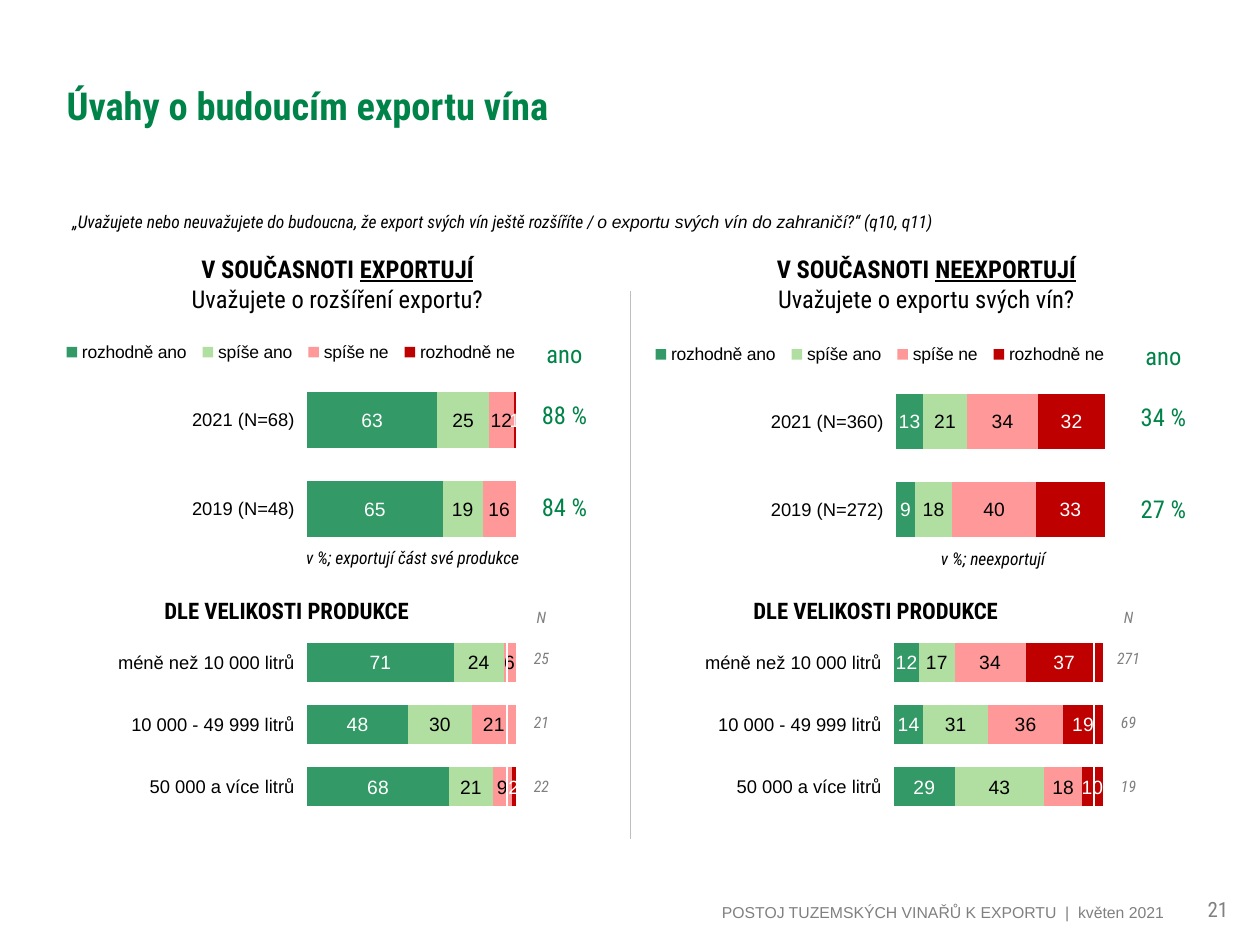
"""Build the slide on plans for future wine exports."""
from dataclasses import dataclass

import lxml.etree
import pptx
import pptx.chart.chart
import pptx.chart.data
import pptx.dml.color
import pptx.enum.chart
import pptx.enum.shapes
import pptx.enum.text
import pptx.oxml
import pptx.oxml.ns
import pptx.slide
import pptx.text.text
import pptx.util

RGB = pptx.dml.color.RGBColor
Align = pptx.enum.text.PP_ALIGN
Anchor = pptx.enum.text.MSO_ANCHOR
qn = pptx.oxml.ns.qn

BLACK = RGB(0x00, 0x00, 0x00)
WHITE = RGB(0xFF, 0xFF, 0xFF)
GRAY = RGB(0x80, 0x80, 0x80)
RULE_GRAY = RGB(0xBF, 0xBF, 0xBF)
GREEN = RGB(0x00, 0x83, 0x48)
CONDENSED = "Roboto Condensed"
ARIAL = "Arial"
PX_PER_INCH = 126


@dataclass(frozen=True)
class Answer:
    name: str
    fill: RGB
    ink: RGB
    number_format: str


@dataclass(frozen=True)
class Style:
    size: float
    color: RGB = BLACK
    face: str = CONDENSED
    bold: bool = False
    italic: bool = False
    underline: bool = False


@dataclass(frozen=True)
class Box:
    left: int
    top: int
    width: int
    height: int

    def emu(self) -> tuple[int, ...]:
        return tuple(px(n) for n in (self.left, self.top, self.width, self.height))


@dataclass(frozen=True)
class Bars:
    box: Box
    categories: list[str]
    rows: list[list[int | None]]
    plot_top: float
    legend_top: float | None = None


@dataclass(frozen=True)
class Column:
    box: Box
    texts: list[str]
    style: Style


@dataclass(frozen=True)
class Side:
    heading_left: int
    status: str
    question: str
    note: str
    note_box: Box
    size_title_left: int
    by_size: Bars
    counts: Column
    by_year: Bars
    shares: Column


ANSWERS = [
    Answer("rozhodně ano", RGB(0x33, 0x99, 0x66), WHITE, "0"),
    Answer("spíše ano", RGB(0xB0, 0xDF, 0xA1), BLACK, "0"),
    Answer("spíše ne", RGB(0xFF, 0x99, 0x99), BLACK, "#,##0"),
    Answer("rozhodně ne", RGB(0xBF, 0x00, 0x00), WHITE, "#,##0"),
]
SIZES = ["méně než 10 000 litrů", "10 000 - 49 999 litrů", "50 000 a více litrů"]
QUOTE = Style(10, italic=True)
COUNT = Style(9, GRAY, italic=True)
SHARE = Style(14, GREEN)

SIDES = [
    Side(54, "EXPORTUJÍ", "Uvažujete o rozšíření exportu?",
         "v %; exportují část své produkce", Box(265, 541, 295, 34), 152,
         Bars(Box(20, 619, 602, 199), SIZES,
              [[71, 24, 6, None], [48, 30, 21, None], [68, 21, 9, 2]], 0.064),
         Column(Box(507, 563, 69, 256), ["N", "25", "21", "22"], COUNT),
         Bars(Box(20, 326, 602, 228), ["2021 (N=68)", "2019 (N=48)"],
              [[63, 25, 12, 1], [65, 19, 16, None]], 0.217, 0.07),
         Column(Box(530, 278, 69, 276), ["ano", "88 %", "84 %"], SHARE)),
    Side(643, "NEEXPORTUJÍ", "Uvažujete o exportu svých vín?",
         "v %; neexportují", Box(830, 542, 326, 34), 741,
         Bars(Box(607, 619, 602, 199), SIZES,
              [[12, 17, 34, 37], [14, 31, 36, 19], [29, 43, 18, 10]], 0.064),
         Column(Box(1094, 563, 69, 256), ["N", "271", "69", "19"], COUNT),
         Bars(Box(609, 326, 602, 228), ["2021 (N=360)", "2019 (N=272)"],
              [[13, 21, 34, 32], [9, 18, 40, 33]], 0.225, 0.08),
         Column(Box(1129, 280, 69, 276), ["ano", "34 %", "27 %"], SHARE)),
]


def px(count: int) -> int:
    return round(count * pptx.util.Inches(1) / PX_PER_INCH)


def apply_font(font: pptx.text.text.Font, style: Style) -> None:
    font.name, font.size = style.face, pptx.util.Pt(style.size)
    font.bold, font.italic = style.bold, style.italic
    if style.underline:
        font.underline = True
    font.color.rgb = style.color


def add_text(page: pptx.slide.Slide, box: Box, spans: list[tuple[str, Style]],
             align: Align = Align.LEFT, anchor: Anchor = Anchor.TOP,
             wrap: bool = True) -> pptx.text.text._Paragraph:
    frame = page.shapes.add_textbox(*box.emu()).text_frame
    frame.word_wrap, frame.vertical_anchor = wrap, anchor
    para = frame.paragraphs[0]
    para.alignment = align
    for text, style in spans:
        span = para.add_run()
        span.text = text.rstrip("\n")
        apply_font(span.font, style)
        if text.endswith("\n"):
            para.add_line_break()
    return para


def set_layout(parent: lxml.etree._Element, index: int, **values: str | float) -> None:
    for old in parent.findall(qn("c:layout")):
        parent.remove(old)
    layout = pptx.oxml.parse_xml(f'<c:layout {pptx.oxml.ns.nsdecls("c")}/>')
    manual = lxml.etree.SubElement(layout, qn("c:manualLayout"))
    for tag, value in values.items():
        lxml.etree.SubElement(manual, qn(f"c:{tag}")).set("val", str(value))
    parent.insert(index, layout)


def add_bars(page: pptx.slide.Slide, bars: Bars) -> None:
    data = pptx.chart.data.CategoryChartData()
    data.categories = bars.categories
    for answer, values in zip(ANSWERS, zip(*bars.rows)):
        data.add_series(answer.name, values)
    kind = pptx.enum.chart.XL_CHART_TYPE.BAR_STACKED_100
    chart = page.shapes.add_chart(kind, *bars.box.emu(), data).chart
    chart.has_title = False
    apply_font(chart.font, Style(10.5, face=ARIAL))
    chart.value_axis.visible = False
    chart.value_axis.has_major_gridlines = False
    chart.category_axis.reverse_order = True
    chart.category_axis.format.line.fill.background()
    plot = chart.plots[0]
    plot.gap_width, plot.overlap, plot.vary_by_categories = 60, 100, False
    for answer, series in zip(ANSWERS, plot.series):
        series.format.fill.solid()
        series.format.fill.fore_color.rgb = answer.fill
        labels = series.data_labels
        labels.show_value = True
        labels.number_format, labels.number_format_is_linked = answer.number_format, False
        labels.position = pptx.enum.chart.XL_LABEL_POSITION.CENTER
        apply_font(labels.font, Style(11, answer.ink, ARIAL))
    set_layout(chart._chartSpace.chart.plotArea, 0, layoutTarget="inner", xMode="edge",
               yMode="edge", x=0.477, y=bars.plot_top, w=0.347, h=1 - bars.plot_top)
    chart.has_legend = bars.legend_top is not None
    if chart.has_legend:
        chart.legend.include_in_layout = False
        apply_font(chart.legend.font, Style(10, face=ARIAL))
        set_layout(chart.legend._element, 1, xMode="edge", yMode="edge",
                   x=0.06, y=bars.legend_top, w=0.78, h=0.09)


def add_column(page: pptx.slide.Slide, column: Column) -> None:
    table = page.shapes.add_table(len(column.texts), 1, *column.box.emu()).table
    table.first_row = table.horz_banding = False
    for index, text in enumerate(column.texts):
        cell = table.cell(index, 0)
        cell.fill.background()
        cell.margin_left = cell.margin_right = cell.margin_top = px(1)
        cell.margin_bottom = 0
        cell.vertical_anchor = Anchor.MIDDLE if index else Anchor.BOTTOM
        para = cell.text_frame.paragraphs[0]
        para.text, para.alignment = text, Align.CENTER
        apply_font(para.runs[0].font, column.style)


def add_side(page: pptx.slide.Slide, side: Side) -> None:
    add_bars(page, side.by_size)
    add_text(page, Box(side.size_title_left, 591, 336, 40),
             [("DLE VELIKOSTI PRODUKCE", Style(13, bold=True))], wrap=False)
    add_column(page, side.counts)
    add_text(page, side.note_box, [(side.note, QUOTE)], Align.CENTER)
    add_text(page, Box(side.heading_left, 248, 567, 72),
             [("V SOUČASNOTI ", Style(14, bold=True)),
              (side.status + "\n", Style(14, bold=True, underline=True)),
              (side.question, Style(14))], Align.CENTER)
    add_bars(page, side.by_year)
    add_column(page, side.shares)


def add_divider(page: pptx.slide.Slide) -> None:
    straight = pptx.enum.shapes.MSO_CONNECTOR.STRAIGHT
    line = page.shapes.add_connector(straight, px(630), px(291), px(630), px(839))
    line.line.color.rgb, line.line.width = RULE_GRAY, pptx.util.Pt(0.5)
    lxml.etree.SubElement(line._element.spPr, qn("a:effectLst"))


def main() -> None:
    deck = pptx.Presentation()
    deck.slide_width, deck.slide_height = px(1260), px(945)
    page = deck.slides.add_slide(deck.slide_layouts[5])
    title = page.shapes.title
    title.left, title.top, title.width, title.height = Box(54, 26, 903, 158).emu()
    title.text_frame.text = "Úvahy o budoucím exportu vína"
    title.text_frame.vertical_anchor = Anchor.MIDDLE
    title.text_frame.paragraphs[0].alignment = Align.LEFT
    apply_font(title.text_frame.paragraphs[0].runs[0].font, Style(22, GREEN, bold=True))
    add_text(page, Box(909 - 821, 879, 1088, 49),
             [("POSTOJ TUZEMSKÝCH VINAŘŮ K\u00a0EXPORTU  |  květen 2021", Style(9, GRAY, ARIAL))],
             Align.RIGHT, Anchor.BOTTOM)
    add_text(page, Box(1176, 879, 84, 49), [("21", Style(12, GRAY))],
             Align.CENTER, Anchor.BOTTOM)
    question = add_text(page, Box(60, 207, 1171, 32), [
        ("„Uvažujete nebo neuvažujete do budoucna, že export svých vín ještě rozšíříte / ", QUOTE),
        ("o exportu svých vín do zahraničí", Style(10, face=ARIAL, italic=True)),
        ("?“ (q10, q11)", QUOTE)])
    question.line_spacing = 0.9
    add_divider(page)
    for side in SIDES:
        add_side(page, side)
    deck.save("out.pptx")


if __name__ == "__main__":
    main()
